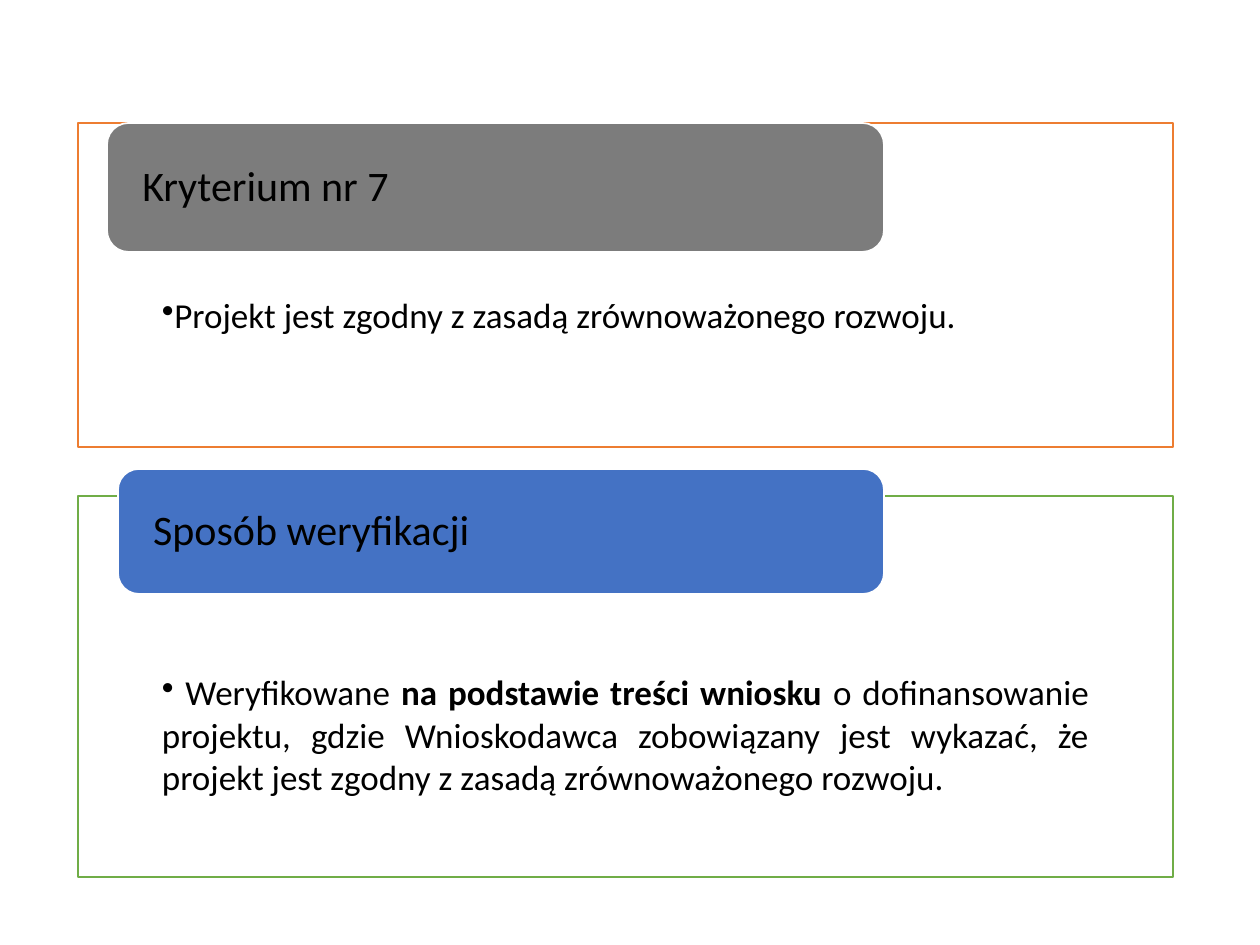
from pptx import Presentation
from pptx.dml.color import RGBColor
from pptx.enum.shapes import MSO_SHAPE
from pptx.enum.text import MSO_ANCHOR, PP_ALIGN
from pptx.oxml.ns import qn
from pptx.util import Emu, Pt
from lxml import etree

RECTANGLE = MSO_SHAPE.RECTANGLE
ROUNDED = MSO_SHAPE.ROUNDED_RECTANGLE
ALTERNATE = MSO_SHAPE.FLOWCHART_ALTERNATE_PROCESS
TOP, MIDDLE = MSO_ANCHOR.TOP, MSO_ANCHOR.MIDDLE
LEFT, JUSTIFY = PP_ALIGN.LEFT, PP_ALIGN.JUSTIFY

PX = 914400 / 126
COLORS = {
    "white": "FFFFFF",
    "text": "000000",
    "orange": "ED7D31",
    "green": "70AD47",
    "gray": "7C7C7C",
    "blue": "4472C4",
}
SIDES = ("left", "top", "right", "bottom")

SECTIONS = [
    {
        "box": (78, 123, 1095, 324),
        "line": "orange",
        "header": {"box": (29, 0, 777, 129), "kind": ROUNDED, "fill": "gray"},
        "title": "Kryterium nr 7",
        "body": [("Projekt jest zgodny z zasadą zrównoważonego rozwoju.", False)],
        "spacing": 0.9,
    },
    {
        "box": (78, 496, 1095, 381),
        "line": "green",
        "header": {"box": (40, -27, 766, 125), "kind": ALTERNATE, "fill": "blue"},
        "title": "Sposób weryfikacji",
        "body": [
            (" ", True),
            ("Weryfikowane ", False),
            ("na podstawie treści wniosku ", True),
            ("o dofinansowanie projektu, gdzie Wnioskodawca zobowiązany jest wykazać, "
             "że projekt jest zgodny z zasadą zrównoważonego rozwoju.", False),
        ],
        "spacing": 1.0,
    },
]


def px(value):
    """Turn pixels into EMU."""
    return Emu(round(value * PX))


def color(name):
    """Look up a colour by name."""
    return RGBColor.from_string(COLORS[name])


def set_values(target, values):
    """Set each attribute from a dict of format values."""
    for name, value in values.items():
        setattr(target, name, value)


def add_panel(page, kind, box, fill, line):
    """Add a filled and outlined shape."""
    shape = page.shapes.add_shape(kind, *map(px, box))
    shape.shadow.inherit = False
    shape.fill.solid()
    shape.fill.fore_color.rgb = color(fill)
    shape.line.color.rgb = color(line)
    shape.line.width = Pt(1)
    return shape


def add_bullet(para):
    """Give a paragraph a round bullet without a hanging indent."""
    properties = para._p.get_or_add_pPr()
    properties.set("marL", "0")
    properties.set("indent", "0")
    etree.SubElement(properties, qn("a:buChar")).set("char", "•")


def write_text(shape, spans, size, insets, anchor, paragraph, bullet=False):
    """Write one paragraph of spans into a shape."""
    frame = shape.text_frame
    margins = {f"margin_{side}": px(inset) for side, inset in zip(SIDES, insets)}
    set_values(frame, {"word_wrap": True, "vertical_anchor": anchor, **margins})
    para = frame.paragraphs[0]
    if bullet:
        add_bullet(para)
    set_values(para, paragraph)
    for text, bold in spans:
        span = para.add_run()
        span.text = text
        set_values(span.font, {"name": "Calibri", "size": Pt(size), "bold": bold})
        span.font.color.rgb = color("text")


def add_section(page, section):
    """Place a framed body with its overlapping header."""
    left, top, _, _ = section["box"]
    body = add_panel(page, RECTANGLE, section["box"], "white", section["line"])
    write_text(body, section["body"], 20, (84, 175, 84, 20), TOP,
               {"alignment": JUSTIFY, "line_spacing": section["spacing"]}, bullet=True)

    header = section["header"]
    across, down, width, height = header["box"]
    title = add_panel(page, header["kind"], (left + across, top + down, width, height),
                      header["fill"], "white")
    write_text(title, [(section["title"], False)], 24, (29, 0, 29, 0), MIDDLE,
               {"alignment": LEFT, "line_spacing": 0.9})


def main():
    """Build and save the deck."""
    deck = Presentation()
    set_values(deck, {"slide_width": px(1260), "slide_height": px(945)})
    page = deck.slides.add_slide(deck.slide_layouts[6])
    for section in SECTIONS:
        add_section(page, section)
    deck.save("out.pptx")


if __name__ == "__main__":
    main()
